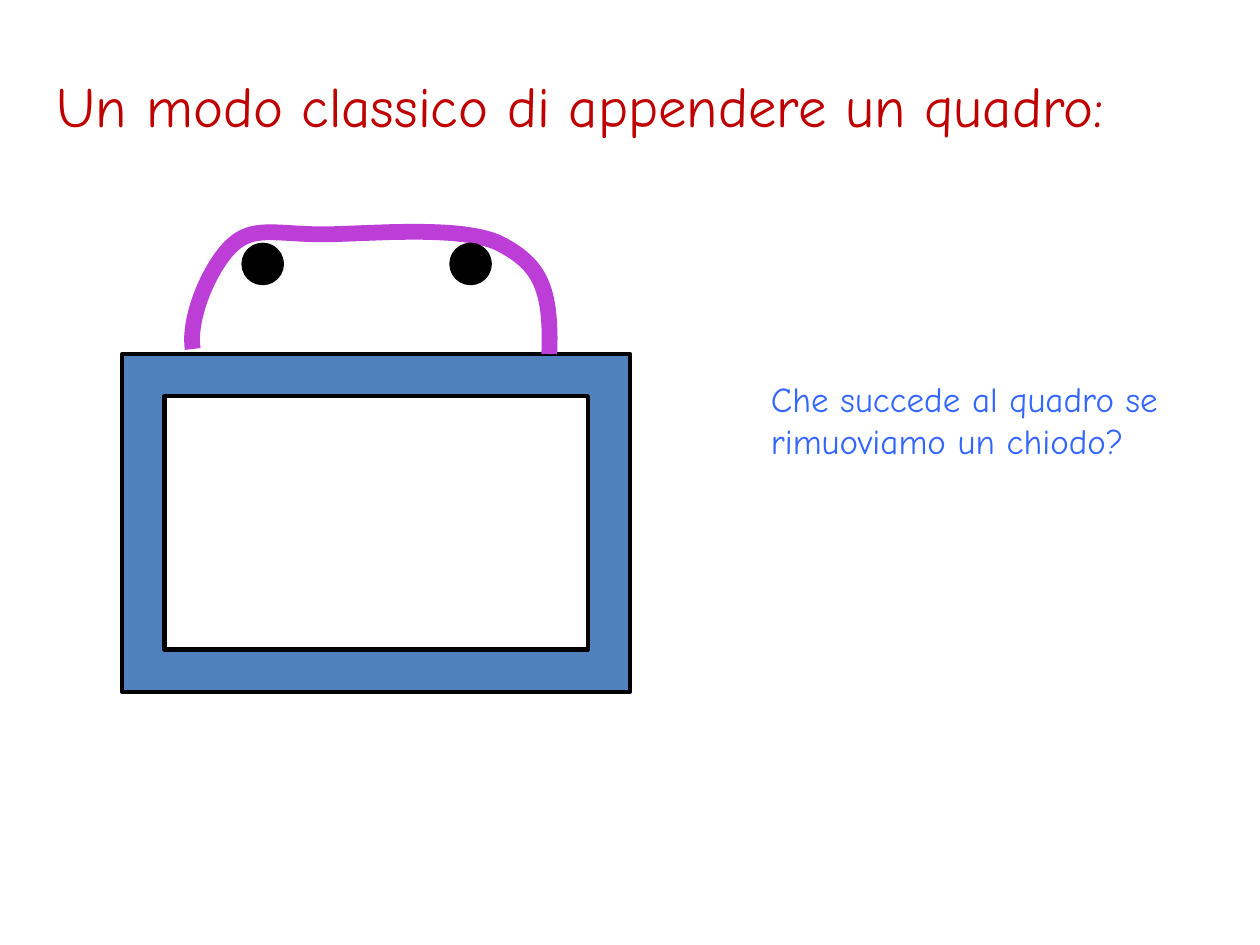
from pptx import Presentation
from pptx.dml.color import RGBColor
from pptx.enum import shapes, text
from pptx.util import Pt

# Content; lengths in points
FONT = "Comic Neue"
TITLE = "Un modo classico di appendere un quadro:"
QUESTION = "Che succede al quadro se rimuoviamo un chiodo?"
FRAME_BOX = (69.84, 202.32, 290.16, 192.96)
NAIL_SIZE, NAIL_TOP = 22.32, 139.68
NAIL_LEFTS = (138.96, 257.76)
ROPE_START = (110.16, 199.44)
# Each curve: two control points, then the end point
ROPE_CURVES = [
    ((107.28, 180.72), (120.96, 150.48), (133.2, 139.68)),
    ((145.44, 128.88), (158.4, 133.92), (184.32, 133.92)),
    ((209.52, 133.92), (264.96, 128.16), (286.56, 139.68)),
    ((308.16, 151.2), (315.36, 164.16), (313.92, 202.32)),
]
STEPS = 24


def color(value):
    return RGBColor.from_string(value)


def style(shape, fill, line, width):
    shape.shadow.inherit = False
    if fill:
        shape.fill.solid()
        shape.fill.fore_color.rgb = color(fill)
    else:
        shape.fill.background()
    shape.line.color.rgb = color(line)
    shape.line.width = Pt(width)


def add_shape(kind, box, fill, line, width):
    shape = page.shapes.add_shape(kind, *map(Pt, box))
    style(shape, fill, line, width)


def write(shape, wording, size, ink):
    para = shape.text_frame.paragraphs[0]
    para.alignment = text.PP_ALIGN.LEFT
    span = para.add_run()
    span.text = wording
    span.font.name = FONT
    span.font.size = Pt(size)
    span.font.color.rgb = color(ink)


def add_nail(left):
    add_shape(shapes.MSO_SHAPE.OVAL, (left, NAIL_TOP, NAIL_SIZE, NAIL_SIZE),
              "000000", "000000", 2)


def curve_points(start, curves):
    for first, second, end in curves:
        for step in range(1, STEPS + 1):
            t = step / STEPS
            u = 1 - t
            yield tuple(
                Pt(u**3 * a + 3 * u**2 * t * b + 3 * u * t**2 * c + t**3 * d)
                for a, b, c, d in zip(start, first, second, end))
        start = end


deck = Presentation()
deck.slide_width, deck.slide_height = Pt(720), Pt(540)
page = deck.slides.add_slide(deck.slide_layouts[5])

# Title
title = page.shapes.title
title.left, title.top, title.width, title.height = map(Pt, (25.2, 15.12, 674.64, 90))
title.text_frame.auto_size = text.MSO_AUTO_SIZE.NONE
title.text_frame.vertical_anchor = text.MSO_ANCHOR.MIDDLE
write(title, TITLE, 32.4, "C00000")

# Picture frame
add_shape(shapes.MSO_SHAPE.FRAME, FRAME_BOX, "4F81BD", "000000", 2.5)

# Question
question = page.shapes.add_textbox(*map(Pt, (433.44, 212.4, 260.64, 55.44)))
question.text_frame.word_wrap = True
question.text_frame.auto_size = text.MSO_AUTO_SIZE.SHAPE_TO_FIT_TEXT
write(question, QUESTION, 20, "3366FF")

# Rope passing over the two nails
add_nail(NAIL_LEFTS[0])
builder = page.shapes.build_freeform(*map(Pt, ROPE_START))
builder.add_line_segments(list(curve_points(ROPE_START, ROPE_CURVES)), close=False)
style(builder.convert_to_shape(), None, "BD3DD7", 9)
add_nail(NAIL_LEFTS[1])

deck.save("out.pptx")
